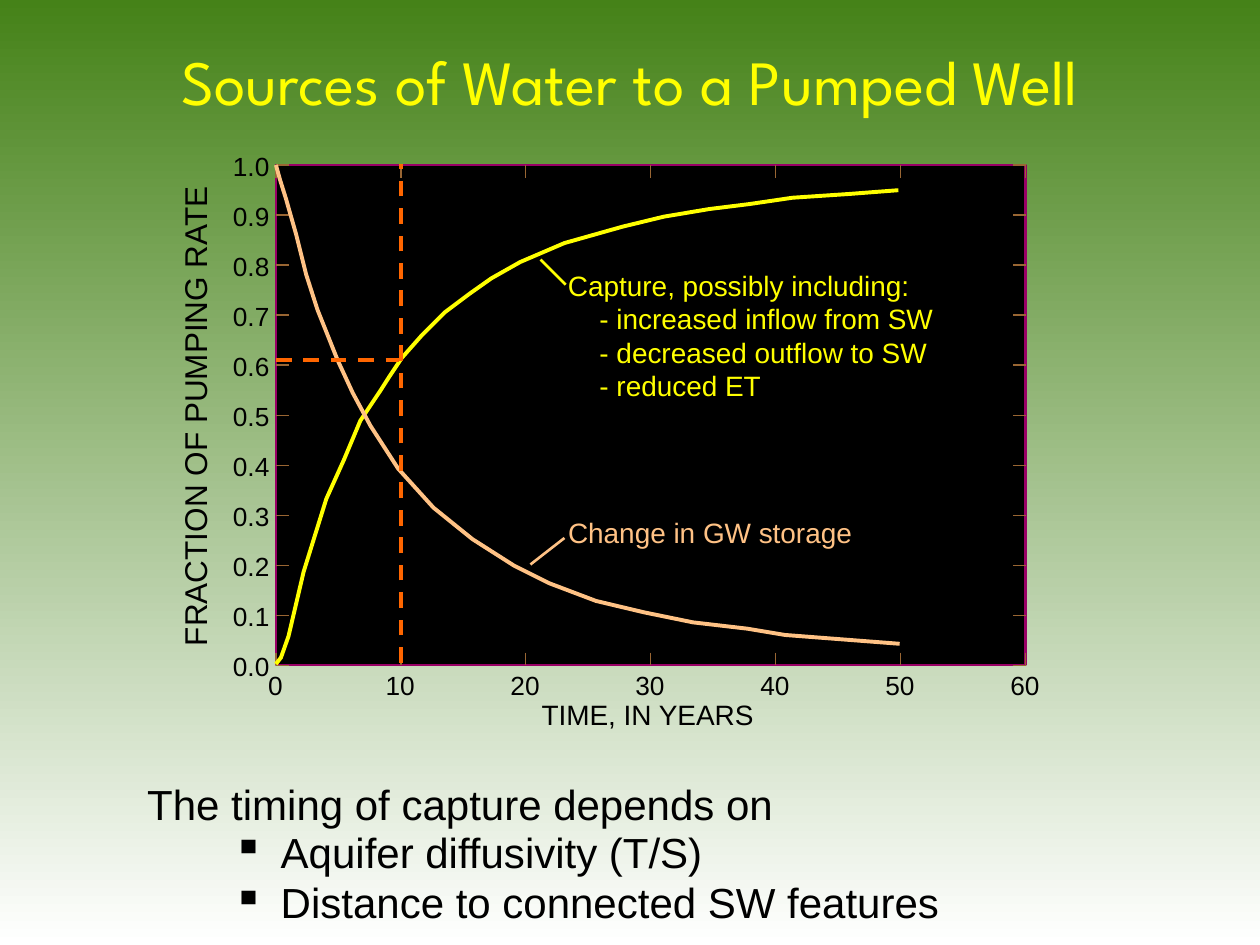
from lxml.etree import SubElement
from pptx import Presentation
from pptx.dml.color import RGBColor as Rgb
from pptx.enum.dml import MSO_LINE as Dash
from pptx.enum.shapes import MSO_CONNECTOR as Link, MSO_SHAPE as Kind
from pptx.enum.text import MSO_ANCHOR as Anchor, MSO_AUTO_SIZE as Fit, PP_ALIGN as Align
from pptx.oxml.ns import qn
from pptx.util import Inches, Pt

HUES = {
    "green": "458218", "white": "FFFFFF", "black": "000000", "frame": "990066",
    "tick": "996633", "yellow": "FFFF00", "peach": "FFC285", "orange": "FF6600",
}
LEFT, TOP, WIDE, HIGH = 2.19, 1.31, 5.95, 3.97
RIGHT, BASE = LEFT + WIDE, TOP + HIGH
TICK = 0.1
ROWS, COLS = 10, 6
CAPTURE = [
    (2.19, 5.27), (2.23, 5.22), (2.29, 5.05), (2.41, 4.54), (2.59, 3.96), (2.73, 3.65),
    (2.86, 3.34), (3.02, 3.1), (3.09, 2.99), (3.19, 2.84), (3.35, 2.66), (3.53, 2.48),
    (3.73, 2.33), (3.9, 2.21), (4.13, 2.08), (4.48, 1.93), (4.94, 1.8), (5.27, 1.72),
    (5.63, 1.66), (5.95, 1.62), (6.29, 1.57), (6.74, 1.54), (7.13, 1.51),
]
STORAGE = [
    (2.19, 1.31), (2.22, 1.42), (2.27, 1.58), (2.35, 1.86), (2.43, 2.18), (2.52, 2.46),
    (2.68, 2.86), (2.8, 3.12), (2.94, 3.38), (3.16, 3.72), (3.44, 4.03), (3.75, 4.28),
    (4.08, 4.49), (4.36, 4.63), (4.73, 4.77), (5.11, 4.86), (5.5, 4.94), (5.93, 4.99),
    (6.23, 5.04), (7.14, 5.11),
]


class Pen:
    """Draws styled elements on the current slide."""

    def __init__(self, slide, face="Arial"):
        self.slide, self.face = slide, face
        self.shapes = slide.shapes

    def hue(self, name):
        return Rgb.from_string(HUES[name])

    def stroke(self, item, hue, width):
        item.line.color.rgb = self.hue(hue)
        item.line.width = Pt(width)

    def back(self, *hues):
        fill = self.slide.background.fill
        fill.gradient()
        fill.gradient_angle = 270
        for stop, hue in zip(fill.gradient_stops, hues):
            stop.color.rgb = self.hue(hue)

    def rect(self, box, fill, line, width):
        item = self.shapes.add_shape(Kind.RECTANGLE, *map(Inches, box))
        item.shadow.inherit = False
        item.fill.solid()
        item.fill.fore_color.rgb = self.hue(fill)
        self.stroke(item, line, width)

    def line(self, x1, y1, x2, y2, hue, width, dash=None):
        item = self.shapes.add_connector(Link.STRAIGHT, *map(Inches, (x1, y1, x2, y2)))
        SubElement(item._element.spPr, qn("a:effectLst"))
        self.stroke(item, hue, width)
        if dash:
            item.line.dash_style = dash

    def curve(self, dots, hue):
        first, *rest = [(Inches(x), Inches(y)) for x, y in dots]
        path = self.shapes.build_freeform(*first)
        path.add_line_segments(rest, close=False)
        item = path.convert_to_shape()
        item.shadow.inherit = False
        item.fill.background()
        self.stroke(item, hue, 2.25)

    def text(self, box, words, size, hue="black", wrap=False, face=None,
             indent=0, bullet=None, align=None):
        item = self.shapes.add_textbox(*map(Inches, box))
        frame = item.text_frame
        frame.text = words
        frame.word_wrap = wrap
        frame.auto_size = Fit.SHAPE_TO_FIT_TEXT
        for para in frame.paragraphs:
            prop = para._p.get_or_add_pPr()
            if indent:
                prop.set("marL", str(Inches(indent)))
                prop.set("indent", str(-Inches(indent)))
            if bullet:
                SubElement(prop, qn("a:buChar")).set("char", bullet)
            if align is not None:
                para.alignment = align
            font = para.font
            font.name, font.size = face or self.face, Pt(size)
            font.color.rgb = self.hue(hue)
        return item


def draw_plot(pen):
    pen.rect((LEFT, TOP, WIDE, HIGH), "black", "frame", 1.5)
    for row in range(ROWS + 1):
        y = TOP + row * HIGH / ROWS
        for x in (LEFT, RIGHT - TICK):
            pen.line(x, y, x + TICK, y, "tick", 0.75)
        pen.text((1.75, y - 0.17, 0.49, 0.35), f"{1 - row / ROWS:.1f}", 15)
    for col in range(COLS + 1):
        x = LEFT + col * WIDE / COLS
        for y in (TOP, BASE - TICK):
            pen.line(x, y, x, y + TICK, "tick", 0.75)
        width = 0.44 if col else 0.32
        pen.text((x - width / 2, 5.26, width, 0.35), str(col * 10), 15)
    pen.curve(CAPTURE, "yellow")
    pen.curve(STORAGE, "peach")
    pen.text((4.2, 5.49, 1.95, 0.37), "TIME, IN YEARS", 16)
    side = pen.text((-0.4, 3.08, 3.89, 0.4), "FRACTION OF PUMPING RATE", 18)
    side.rotation = 270


def draw_notes(pen):
    pen.text((4.41, 4.04, 2.52, 0.37), "Change in GW storage", 16, "peach")
    pen.line(4.48, 4.27, 4.21, 4.48, "peach", 1.5)
    pen.text((4.41, 2.08, 3.34, 1.17),
             "Capture, possibly including:\v- increased inflow from SW"
             "\v- decreased outflow to SW\v- reduced ET",
             16, "yellow", wrap=True, indent=0.25)
    pen.line(4.29, 2.06, 4.49, 2.26, "yellow", 1.5)
    pen.line(3.18, 5.26, 3.18, 1.3, "orange", 2.25, Dash.DASH)
    pen.line(LEFT, 2.86, 3.17, 2.86, "orange", 2.25, Dash.DASH)


def main():
    deck = Presentation()
    deck.slide_width, deck.slide_height = Inches(10), Inches(7.5)
    pen = Pen(deck.slides.add_slide(deck.slide_layouts[6]))
    pen.back("green", "white")
    title = pen.text((0.5, 0.01, 9, 1.25), "Sources of Water to a Pumped Well", 36,
                     "yellow", wrap=True, face="League Spartan", align=Align.CENTER)
    title.text_frame.auto_size = Fit.NONE
    title.text_frame.vertical_anchor = Anchor.MIDDLE
    draw_plot(pen)
    draw_notes(pen)
    pen.text((1.07, 6.13, 5.31, 0.51), "The timing of capture depends on", 24)
    pen.text((1.75, 6.51, 5.86, 0.91),
             "Aquifer diffusivity (T/S)\nDistance to connected SW features",
             24, indent=0.38, bullet="▪")
    deck.save("out.pptx")


if __name__ == "__main__":
    main()
